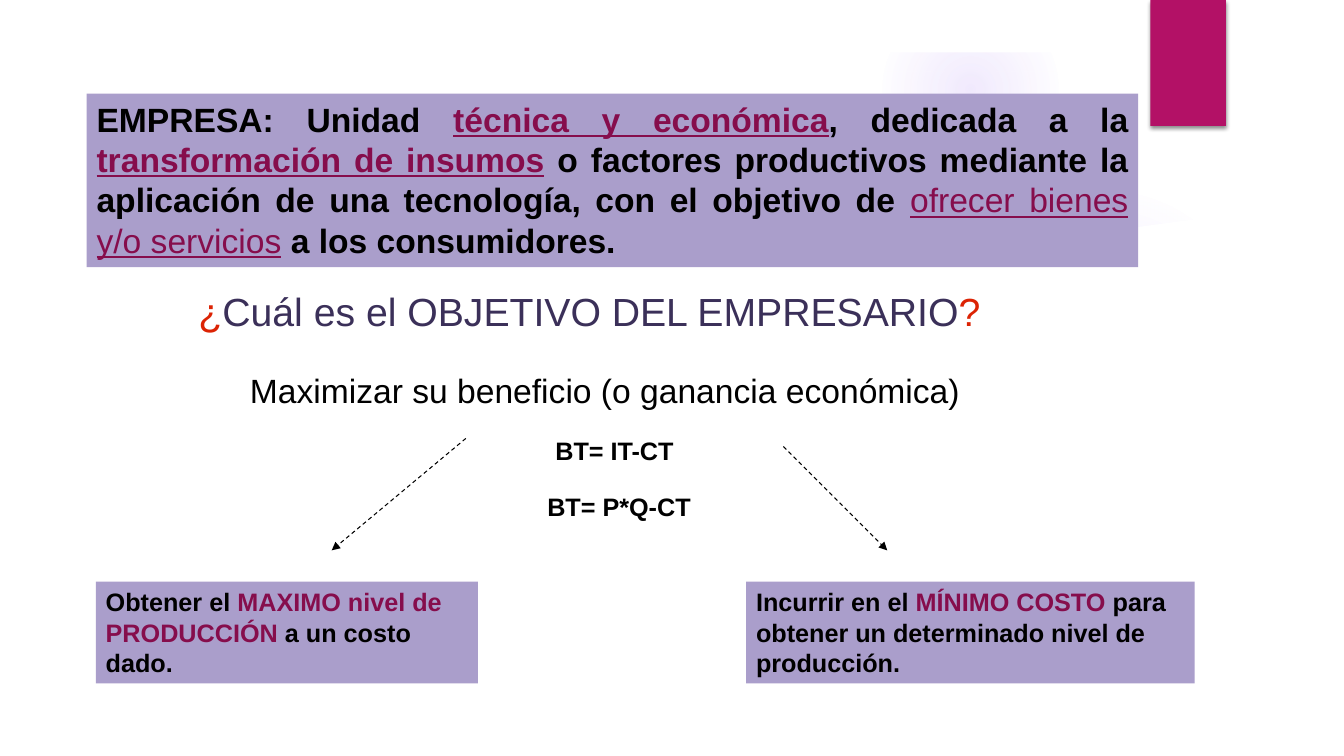
from lxml import etree
from pptx import Presentation
from pptx import util as u
from pptx.dml.color import RGBColor
from pptx.enum import dml, shapes, text
from pptx.oxml import parse_xml
from pptx.oxml.ns import nsdecls, qn

COLORS = {
    "white": "FFFFFF", "black": "000000", "lilac": "AA9ECB", "glow": "9B6BF2",
    "magenta": "B31166", "wine": "860D4C", "red": "DC2304", "navy": "3B3059",
}
KEY = {"color": "wine"}
KEY_UNDERLINED = {"color": "wine", "underline": True}
# Upper edge of the white page panel, as (x, y) in inches
PANEL_EDGE = [(0.5, 2.04), (1.87, 2.21), (4.01, 2.38), (6.82, 2.48),
              (9.49, 2.41), (11.16, 2.27), (12.84, 2.04)]


def rgb(name):
    return RGBColor.from_string(COLORS[name])


def plain(sp, fill):
    sp.shadow.inherit = False
    sp.line.fill.background()
    sp.fill.solid()
    sp.fill.fore_color.rgb = rgb(fill)
    return sp


def add_rect(s, box, fill):
    sp = s.shapes.add_shape(shapes.MSO_SHAPE.RECTANGLE, *map(u.Inches, box))
    return plain(sp, fill)


def add_glow(s, x, y, size, stops):
    sp = s.shapes.add_shape(shapes.MSO_SHAPE.OVAL, *map(u.Inches, (x, y, size, size)))
    plain(sp, "glow")
    marks = "".join(
        f'<a:gs pos="{pos * 1000}"><a:srgbClr val="{COLORS["glow"]}">'
        f'<a:alpha val="{alpha * 1000}"/></a:srgbClr></a:gs>' for pos, alpha in stops)
    grad = parse_xml(
        f'<a:gradFill {nsdecls("a")} rotWithShape="1"><a:gsLst>{marks}</a:gsLst>'
        '<a:path path="circle"><a:fillToRect l="50000" t="50000" r="50000" b="50000"/>'
        '</a:path></a:gradFill>')
    spPr = sp.element.spPr
    spPr.replace(spPr.find(qn("a:solidFill")), grad)


def add_panel(s, edge, bottom):
    points = edge + [(edge[-1][0], bottom), (edge[0][0], bottom)]
    points = [(u.Inches(x), u.Inches(y)) for x, y in points]
    fb = s.shapes.build_freeform(*points[0])
    fb.add_line_segments(points[1:], close=True)
    plain(fb.convert_to_shape(), "white")


def add_drop_shadow(sp):
    effects = sp.element.spPr.find(qn("a:effectLst"))
    effects.append(parse_xml(
        f'<a:outerShdw {nsdecls("a")} blurRad="{u.Pt(3)}" dist="{u.Pt(2)}" dir="5400000" '
        f'rotWithShape="0"><a:srgbClr val="{COLORS["black"]}"><a:alpha val="45000"/>'
        '</a:srgbClr></a:outerShdw>'))


def add_text(s, box, runs, size, bold=False, fill=None, align=text.PP_ALIGN.LEFT):
    if fill:
        sp = add_rect(s, box, fill)
    else:
        sp = s.shapes.add_textbox(*map(u.Inches, box))
    tf = sp.text_frame
    frame = {"word_wrap": True, "vertical_anchor": text.MSO_ANCHOR.TOP,
             "auto_size": text.MSO_AUTO_SIZE.SHAPE_TO_FIT_TEXT}
    for name, value in frame.items():
        setattr(tf, name, value)
    p = tf.paragraphs[0]
    p.alignment = align
    for words, changes in runs:
        r = p.add_run()
        r.text = words
        fmt = {"name": "Arial", "size": u.Pt(size), "bold": bold, "color": "black", **changes}
        r.font.color.rgb = rgb(fmt.pop("color"))
        for name, value in fmt.items():
            setattr(r.font, name, value)


def add_arrow(s, start, end):
    c = s.shapes.add_connector(shapes.MSO_CONNECTOR.STRAIGHT, *map(u.Inches, start + end))
    c.line.color.rgb = rgb("black")
    c.line.width = u.Pt(0.75)
    c.line.dash_style = dml.MSO_LINE.DASH
    etree.SubElement(c.line._get_or_add_ln(), qn("a:tailEnd"), type="triangle")
    etree.SubElement(c.element.spPr, qn("a:effectLst"))


def main():
    prs = Presentation()
    prs.slide_width, prs.slide_height = u.Inches(13.33), u.Inches(7.5)
    s = prs.slides.add_slide(prs.slide_layouts[6])

    # Background glows, white panel and top margin, bookmark
    add_glow(s, 9.41, 1.83, 3.08, [(0, 7), (36, 6), (69, 0)])
    add_glow(s, 8.75, 0.01, 1.75, [(0, 14), (36, 7), (73, 0)])
    add_panel(s, PANEL_EDGE, 7)
    add_rect(s, (0, 0, 13.33, 0.52), "white")
    add_drop_shadow(add_rect(s, (11.41, 0, 0.75, 1.25), "magenta"))

    # Definition
    add_text(s, (0.86, 0.93, 10.43, 1.72), [
        ("EMPRESA: Unidad ", {}),
        ("técnica y económica", KEY_UNDERLINED),
        (", dedicada a la ", {}),
        ("transformación de insumos", KEY_UNDERLINED),
        (" o factores productivos mediante la aplicación de una tecnología, "
         "con el objetivo de ", {}),
        ("ofrecer bienes y/o servicios", {**KEY_UNDERLINED, "bold": False}),
        (" a los consumidores.", {}),
    ], 24, bold=True, fill="lilac", align=text.PP_ALIGN.JUSTIFY)

    # Question and answer
    add_text(s, (1.87, 2.8, 8.66, 0.57), [
        ("¿", {"color": "red"}),
        ("Cuál es el OBJETIVO DEL EMPRESARIO", {"color": "navy"}),
        ("?", {"color": "red"}),
    ], 28)
    add_text(s, (2.38, 3.62, 7.72, 0.5),
             [("Maximizar su beneficio (o ganancia económica)", {})], 24)

    # Two ways to reach the goal
    add_text(s, (0.95, 5.77, 3.79, 1.01), [
        ("Obtener el ", {}),
        ("MAXIMO nivel de PRODUCCIÓN ", KEY),
        ("a un costo dado.", {}),
    ], 18, bold=True, fill="lilac")
    add_text(s, (7.4, 5.77, 4.45, 1.01), [
        ("Incurrir en el ", {}),
        ("MÍNIMO COSTO", KEY),
        (" para obtener un determinado nivel de producción.", {}),
    ], 18, bold=True, fill="lilac")

    # Profit formulas
    add_text(s, (5.41, 4.27, 1.65, 0.4), [("BT= IT-CT", {})], 18, bold=True)
    add_text(s, (5.33, 4.83, 2.07, 0.47), [("BT= P*Q-CT", {})], 18, bold=True)

    # Arrows
    add_arrow(s, (4.62, 4.35), (3.29, 5.46))
    add_arrow(s, (7.77, 4.43), (8.8, 5.46))

    prs.save("out.pptx")


if __name__ == "__main__":
    main()
